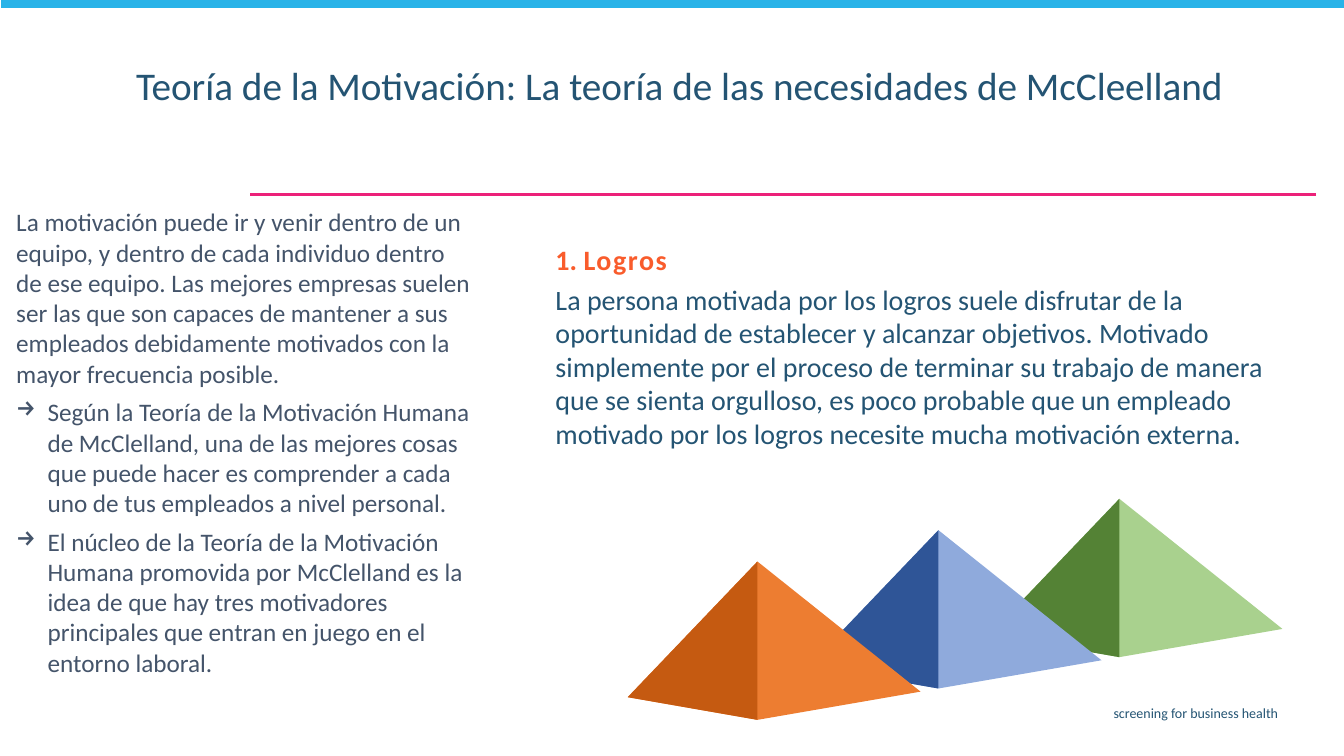
from lxml import etree
from pptx import Presentation
from pptx.dml.color import RGBColor
from pptx.enum.shapes import MSO_CONNECTOR, MSO_SHAPE
from pptx.enum.text import MSO_AUTO_SIZE, PP_ALIGN
from pptx.oxml.ns import qn
from pptx.util import Cm, Pt

NAVY = "245473"
SLATE = "44546A"
ORANGE = "F95C2C"
SKY = "29B3E8"
MAGENTA = "EC2179"

INTRO = (
    "La motivación puede ir y venir dentro de un equipo, y dentro de cada individuo dentro de ese "
    "equipo. Las mejores empresas suelen ser las que son capaces de mantener a sus empleados "
    "debidamente motivados con la mayor frecuencia posible."
)
ARROW_POINTS = [
    "Según la Teoría de la Motivación Humana de McClelland, una de las mejores cosas que puede "
    "hacer es comprender a cada uno de tus empleados a nivel personal.",
    "El núcleo de la Teoría de la Motivación Humana promovida por McClelland es la idea de que hay "
    "tres motivadores principales que entran en juego en el entorno laboral.",
]
ACHIEVEMENT = (
    "La persona motivada por los logros suele disfrutar de la oportunidad de establecer y alcanzar "
    "objetivos. Motivado simplemente por el proceso de terminar su trabajo de manera que se sienta "
    "orgulloso, es poco probable que un empleado motivado por los logros necesite mucha motivación "
    "externa."
)
# Dark left face and light right face, from back to front
PYRAMID_COLORS = [("548235", "A9D18E"), ("2F5597", "8FAADC"), ("C55A11", "ED7D31")]


def rgb(color):
    return RGBColor.from_string(color)


def add_text_frame(slide, box, margins=(0.25, 0.13), grow=False):
    shape = slide.shapes.add_textbox(*map(Cm, box))
    frame = shape.text_frame
    frame.word_wrap = True
    frame.auto_size = MSO_AUTO_SIZE.SHAPE_TO_FIT_TEXT if grow else MSO_AUTO_SIZE.NONE
    frame.margin_left = frame.margin_right = Cm(margins[0])
    frame.margin_top = frame.margin_bottom = Cm(margins[1])
    return frame


def add_run(paragraph, text, size, color, bold=False, spacing=None):
    run = paragraph.add_run()
    run.text = text
    run.font.name = "Calibri"
    run.font.size = Pt(size)
    run.font.bold = bold
    run.font.color.rgb = rgb(color)
    if spacing:
        run.font._element.set("spc", str(round(spacing * 100)))


def add_paragraph(frame, text, size, color, before=0, align=PP_ALIGN.LEFT, line_spacing=None,
                  bullet=None, indent=0.79, **run_format):
    """Fill the empty first paragraph of the frame, or append a new one."""
    first = frame.paragraphs[0]
    paragraph = frame.add_paragraph() if first.runs else first
    paragraph.alignment = align
    if before:
        paragraph.space_before = Pt(before)
    if line_spacing:
        paragraph.line_spacing = line_spacing
    if bullet:
        properties = paragraph._p.get_or_add_pPr()
        properties.set("marL", str(Cm(indent)))
        properties.set("indent", str(-Cm(indent)))
        etree.SubElement(properties, qn("a:buChar")).set("char", bullet)
    add_run(paragraph, text, size, color, **run_format)
    return paragraph


def add_frame_decor(slide):
    """Draw the rule under the title and the bar along the top edge."""
    rule = slide.shapes.add_connector(MSO_CONNECTOR.STRAIGHT, Cm(33.17), Cm(4.9), Cm(6.3), Cm(4.9))
    rule.line.color.rgb = rgb(MAGENTA)
    rule.line.width = Pt(1.5)
    etree.SubElement(rule._element.spPr, qn("a:effectLst"))

    bar = slide.shapes.add_shape(MSO_SHAPE.RECTANGLE, Cm(0.03), Cm(-0.05), Cm(33.88), Cm(0.25))
    bar.shadow.inherit = False
    bar.fill.solid()
    bar.fill.fore_color.rgb = rgb(SKY)
    bar.line.fill.background()


def add_footer(slide, box):
    frame = add_text_frame(slide, box)
    add_paragraph(frame, "screening for business health", 10, NAVY, align=PP_ALIGN.RIGHT)


def add_title(slide, box):
    frame = add_text_frame(slide, box)
    add_paragraph(frame, "Teoría de la Motivación: La teoría de las necesidades de McCleelland",
                  28, NAVY, line_spacing=0.9)


def add_theory_column(slide, box):
    frame = add_text_frame(slide, box, margins=(0.23, 0.1), grow=True)
    add_paragraph(frame, INTRO, 18, SLATE)
    for point in ARROW_POINTS:
        add_paragraph(frame, point, 18, SLATE, before=6, bullet="→")


def add_achievement_text(slide, box):
    frame = add_text_frame(slide, box, margins=(0.23, 0.1), grow=True)
    heading = add_paragraph(frame, "1. ", 20, ORANGE, bold=True)
    add_run(heading, "Logros", 20, ORANGE, bold=True, spacing=1.1)
    add_paragraph(frame, ACHIEVEMENT, 20, NAVY, before=4)


def add_face(shapes, points, color):
    start, *others = [(Cm(x), Cm(y)) for x, y in points]
    builder = shapes.build_freeform(*start)
    builder.add_line_segments(others, close=True)
    face = builder.convert_to_shape()
    face.shadow.inherit = False
    face.fill.solid()
    face.fill.fore_color.rgb = rgb(color)
    face.line.fill.background()


def add_pyramid(shapes, box, dark, light):
    left, top, width, height = box
    middle = left + 0.443 * width
    apex, base = (middle, top), (middle, top + height)
    left_corner = (left, top + 0.857 * height)
    right_corner = (left + width, top + 0.822 * height)
    add_face(shapes, [apex, left_corner, base, right_corner], light)
    add_face(shapes, [apex, left_corner, base], dark)


def add_pyramids(slide, box):
    """Step three overlapping pyramids from the top right to the bottom left of the box."""
    left, top, width, height = box
    pyramid_width, pyramid_height = 7.38, 3.99
    steps = len(PYRAMID_COLORS) - 1
    step_x = (width - pyramid_width) / steps
    step_y = (height - pyramid_height) / steps
    group = slide.shapes.add_group_shape()
    for index, (dark, light) in enumerate(PYRAMID_COLORS):
        place = (left + (steps - index) * step_x, top + index * step_y)
        add_pyramid(group.shapes, (*place, pyramid_width, pyramid_height), dark, light)


def main():
    presentation = Presentation()
    presentation.slide_width = Cm(33.87)
    presentation.slide_height = Cm(19.05)
    slide = presentation.slides.add_slide(presentation.slide_layouts[6])
    add_frame_decor(slide)
    add_footer(slide, (9.27, 17.63, 23.19, 0.74))
    add_title(slide, (3.18, 1.55, 30.12, 2.21))
    add_theory_column(slide, (0.18, 5.11, 11.91, 12.19))
    add_pyramids(slide, (15.82, 12.57, 16.5, 5.57))
    add_achievement_text(slide, (13.77, 6.02, 18.92, 5.54))
    presentation.save("out.pptx")


if __name__ == "__main__":
    main()
